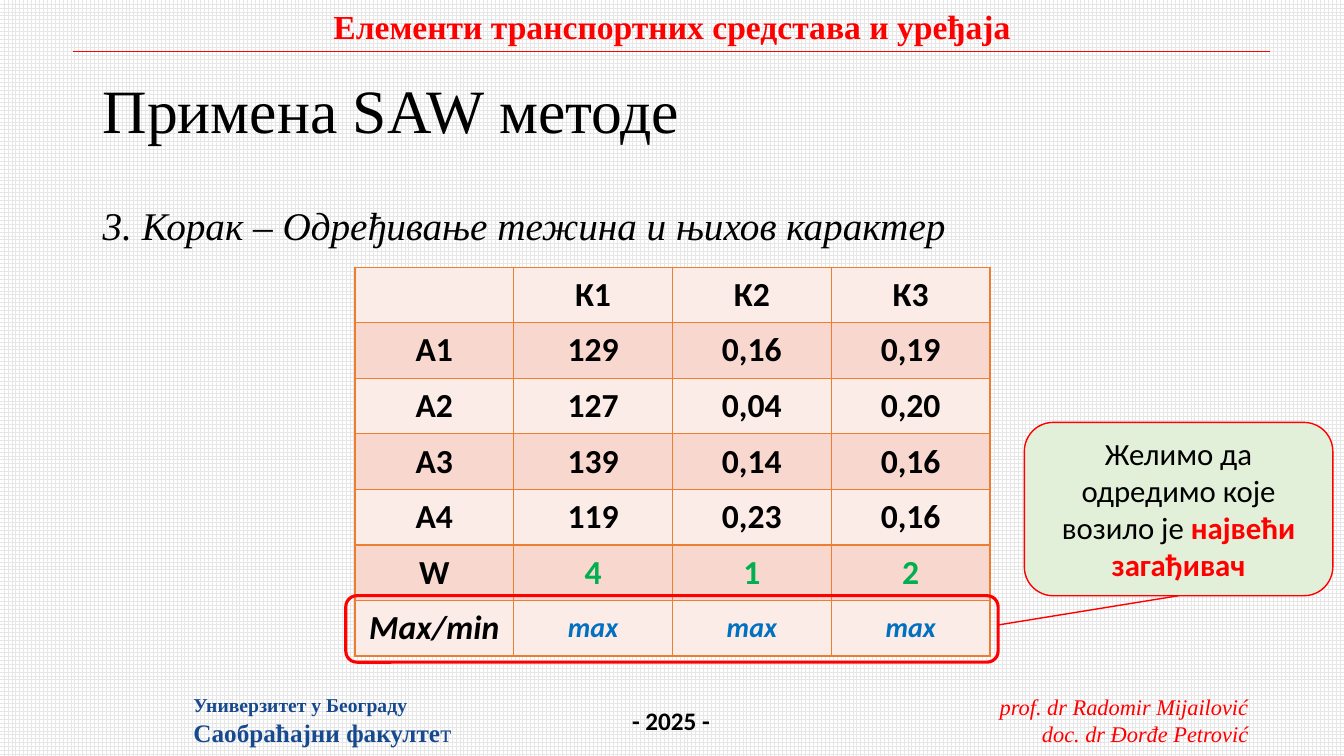
from pptx import Presentation
from pptx import oxml
from pptx.dml.color import RGBColor
from pptx.enum import dml, shapes, text
from pptx.oxml import ns
from pptx.util import Inches, Pt

COLORS = {
    "black": "000000", "red": "FF0000", "navy": "16498E", "green": "00B050",
    "blue": "0070C0", "orange": "ED7D31", "light": "FCECE8", "dark": "F8D7CE",
    "mint": "E2F0D9", "white": "FFFFFF", "grid": "E7E6E6",
}
SERIF, SANS = "Times New Roman", "Calibri"
LEFT, CENTER, RIGHT = text.PP_ALIGN.LEFT, text.PP_ALIGN.CENTER, text.PP_ALIGN.RIGHT
TOP, MIDDLE = text.MSO_ANCHOR.TOP, text.MSO_ANCHOR.MIDDLE
CRITERIA = [
    ["", "К1", "К2", "К3"],
    ["А1", "129", "0,16", "0,19"],
    ["А2", "127", "0,04", "0,20"],
    ["А3", "139", "0,14", "0,16"],
    ["A4", "119", "0,23", "0,16"],
    ["W", "4", "1", "2"],
    ["Max/min", "max", "max", "max"],
]


def rgb(name):
    return RGBColor.from_string(COLORS[name])


def write(frame, paragraphs, align=LEFT, spacing=None, **base):
    for index, runs in enumerate(paragraphs):
        paragraph = frame.paragraphs[0] if index == 0 else frame.add_paragraph()
        paragraph.alignment = align
        paragraph.line_spacing = spacing
        for words, changes in runs:
            style = {"font": SERIF, "color": "black", "bold": False, "italic": False,
                     **base, **changes}
            run = paragraph.add_run()
            run.text = words
            run.font.name = style["font"]
            run.font.size = Pt(style["size"])
            run.font.bold = style["bold"]
            run.font.italic = style["italic"]
            run.font.color.rgb = rgb(style["color"])


def add_text(slide, box, paragraphs, wrap=False, anchor=TOP, **style):
    frame = slide.shapes.add_textbox(*map(Inches, box)).text_frame
    frame.word_wrap = wrap
    frame.vertical_anchor = anchor
    write(frame, paragraphs, **style)


def add_line(slide, start, end, width):
    line = slide.shapes.add_connector(shapes.MSO_CONNECTOR.STRAIGHT,
                                      *map(Inches, start + end))
    line.line.color.rgb = rgb("red")
    line.line.width = Pt(width)
    line._element.spPr.append(oxml.parse_xml(f"<a:effectLst {ns.nsdecls('a')}/>"))


def add_rounded(slide, box, width, fill=None):
    rounded = slide.shapes.add_shape(shapes.MSO_SHAPE.ROUNDED_RECTANGLE, *map(Inches, box))
    rounded.shadow.inherit = False
    rounded.line.color.rgb = rgb("red")
    rounded.line.width = Pt(width)
    if fill:
        rounded.fill.solid()
        rounded.fill.fore_color.rgb = rgb(fill)
    else:
        rounded.fill.background()
    return rounded


def set_borders(cell):
    properties = cell._tc.get_or_add_tcPr()
    for side in "LRTB":
        properties.append(oxml.parse_xml(
            f'<a:ln{side} {ns.nsdecls("a")} w="{Pt(1)}"><a:solidFill>'
            f'<a:srgbClr val="{COLORS["orange"]}"/></a:solidFill></a:ln{side}>'))


def cell_style(row, column):
    style = {"size": 24, "bold": True}
    if row == 5 and column:
        style["color"] = "green"
    if row == 6:
        style["italic"] = True
        if column:
            style.update(size=20, color="blue")
    return style


def add_criteria_table(slide):
    criteria = slide.shapes.add_table(len(CRITERIA), len(CRITERIA[0]), Inches(3.52),
                                      Inches(2.65), Inches(6.3), Inches(3.86)).table
    for row, values in enumerate(CRITERIA):
        for column, value in enumerate(values):
            cell = criteria.cell(row, column)
            set_borders(cell)
            cell.fill.solid()
            cell.fill.fore_color.rgb = rgb("dark" if row % 2 else "light")
            cell.vertical_anchor = MIDDLE
            if value:
                write(cell.text_frame, [[(value, {})]], align=CENTER, font=SANS,
                      **cell_style(row, column))


def add_background(slide):
    fill = slide.background.fill
    fill.patterned()
    fill.pattern = dml.MSO_PATTERN.LARGE_GRID
    fill.fore_color.rgb = rgb("grid")
    fill.back_color.rgb = rgb("white")


def add_header_and_footer(slide):
    add_text(slide, (9.77, 6.83, 2.71, 0.64),
             [[("prof. dr Radomir Mijailović", {})], [("doc. dr Đorđe Petrović", {})]],
             align=RIGHT, size=16, color="red", italic=True)
    add_line(slide, (0.72, 0.51), (12.6, 0.51), 0.5)
    add_text(slide, (3.17, 0.01, 6.99, 0.5),
             [[("Елементи транспортних средстава и уређаја", {})]],
             align=CENTER, size=24, color="red", bold=True)
    add_text(slide, (6.17, 6.95, 0.98, 0.4), [[("- 2025 -", {})]],
             size=18, font=SANS, bold=True)
    add_text(slide, (1.82, 6.83, 2.79, 0.64),
             [[("Универзитет у Београду", {"size": 14})],
              [("Саобраћајни факулте", {}), ("т", {"bold": False})]],
             size=18, color="navy", bold=True)


def add_callout(slide):
    add_rounded(slide, (3.43, 5.91, 6.47, 0.66), 2.25)
    callout = add_rounded(slide, (10.16, 4.19, 3.06, 1.72), 1, "mint")
    callout.text_frame.word_wrap = True
    callout.text_frame.vertical_anchor = MIDDLE
    write(callout.text_frame,
          [[("Желимо да одредимо које возило је ", {}),
            ("највећи загађивач", {"color": "red", "bold": True})]],
          align=CENTER, size=22, font=SANS)
    add_line(slide, (9.9, 6.2), (11.69, 5.91), 1)


def main():
    deck = Presentation()
    deck.slide_width, deck.slide_height = Inches(13.33), Inches(7.5)
    slide = deck.slides.add_slide(deck.slide_layouts[6])
    add_background(slide)
    add_header_and_footer(slide)
    add_text(slide, (0.92, 0.4, 11.5, 1.45), [[("Примена SAW методе", {})]],
             wrap=True, anchor=MIDDLE, spacing=0.9, size=44)
    add_text(slide, (0.92, 2, 11.5, 4.76),
             [[("3. Корак – Одређивање тежина и њихов карактер", {})]],
             wrap=True, spacing=0.9, size=28, italic=True)
    add_criteria_table(slide)
    add_callout(slide)
    deck.save("out.pptx")


if __name__ == "__main__":
    main()
